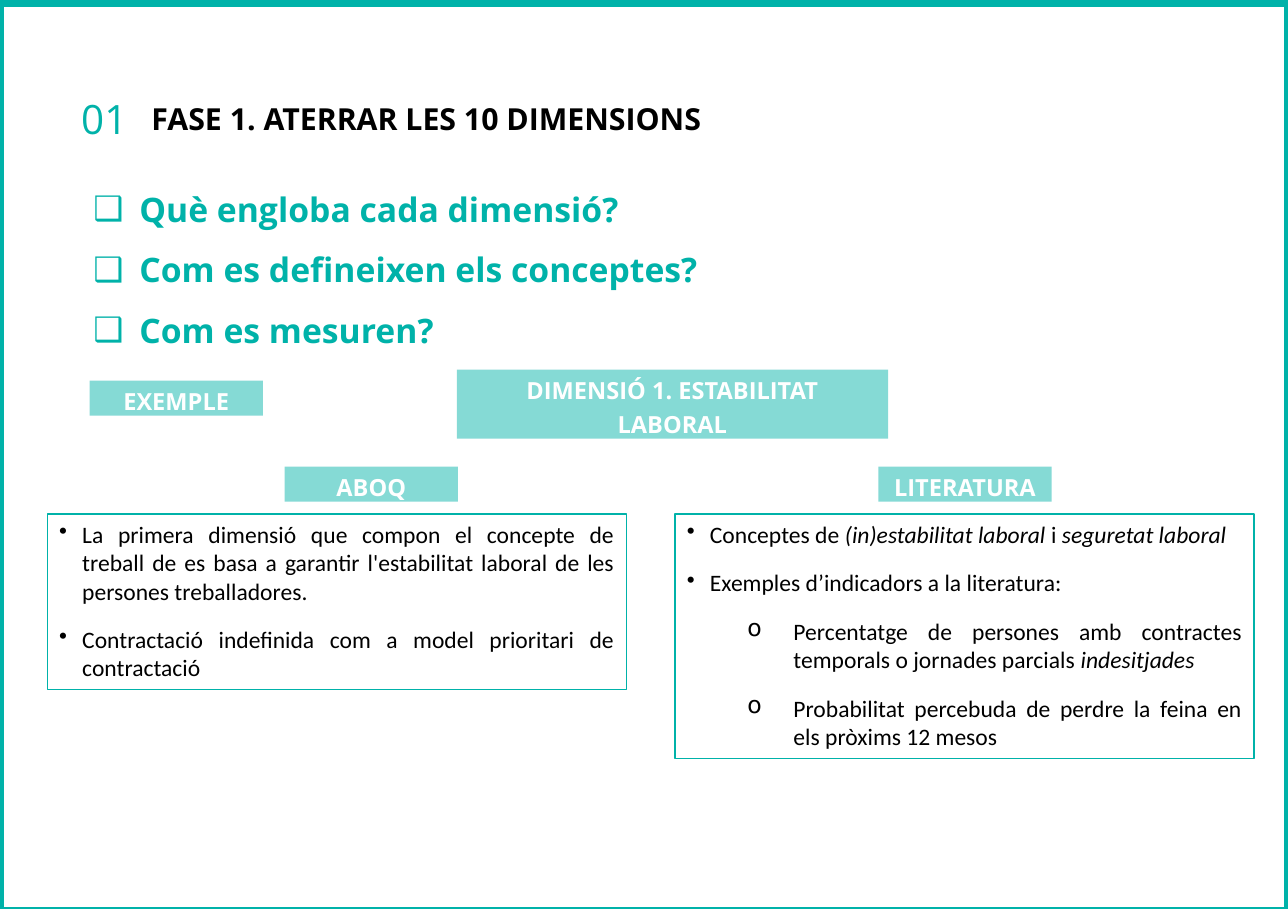
import dataclasses

import lxml.etree
import pptx
import pptx.dml.color
import pptx.enum.shapes
import pptx.enum.text
import pptx.oxml.ns
import pptx.util

PX = 9144  # EMU per px, 100 px to the inch
ALIGN = pptx.enum.text.PP_ALIGN
ANCHOR = pptx.enum.text.MSO_ANCHOR
FIT = pptx.enum.text.MSO_AUTO_SIZE
qn = pptx.oxml.ns.qn


@dataclasses.dataclass(frozen=True)
class Theme:
    teal: str = "00B2A9"
    black: str = "000000"
    white: str = "FFFFFF"
    heading_font: str = "Open Sans"
    body_font: str = "Calibri"
    number_size: int = 24
    question_size: int = 20
    title_size: int = 18
    text_size: int = 14
    frame_line: float = 5
    panel_line: float = 0.75
    label_opacity: int = 48


@dataclasses.dataclass(frozen=True)
class Box:
    left: int
    top: int
    width: int
    height: int

    def inner(self, left, top, width, height):
        """Box whose position is counted from this one's corner."""
        return Box(self.left + left, self.top + top, width, height)

    def emu(self):
        return [pptx.util.Emu(value * PX) for value in dataclasses.astuple(self)]


THEME = Theme()
PLAIN_FRAME = {"margin_left": 0, "margin_right": 0, "margin_top": 0, "margin_bottom": 0,
               "vertical_anchor": ANCHOR.MIDDLE, "word_wrap": True, "auto_size": FIT.NONE}


def apply(target, values):
    for name, value in values.items():
        setattr(target, name, value)


def place(shape, box):
    apply(shape, dict(zip(("left", "top", "width", "height"), box.emu())))


def rgb(color):
    return pptx.dml.color.RGBColor.from_string(color)


def write(paragraph, text, size, color, font=THEME.heading_font, **style):
    run = paragraph.add_run()
    run.text = text
    apply(run.font, {"name": font, "size": pptx.util.Pt(size), **style})
    run.font.color.rgb = rgb(color)


def bullet(paragraph, character, margin, hanging):
    properties = paragraph._p.get_or_add_pPr()
    properties.set("marL", str(margin * PX))
    properties.set("indent", str(-hanging * PX))
    lxml.etree.SubElement(properties, qn("a:buChar")).set("char", character)


def paragraphs(frame, items):
    """Pair each item with a paragraph, the first being the one already there."""
    for index, item in enumerate(items):
        yield (frame.add_paragraph() if index else frame.paragraphs[0]), item


def add_rectangle(slide, box, line_width=None):
    kind = pptx.enum.shapes.MSO_SHAPE.RECTANGLE
    shape = slide.shapes.add_shape(kind, *box.emu())
    shape.shadow.inherit = False
    shape.fill.background()
    if line_width is None:
        shape.line.fill.background()
    else:
        shape.line.color.rgb = rgb(THEME.teal)
        shape.line.width = pptx.util.Pt(line_width)
    return shape


def header(slide, box, number, title):
    number_box = slide.shapes.add_textbox(*box.inner(0, 18, 48, 39).emu())
    apply(number_box.text_frame, PLAIN_FRAME)
    write(number_box.text_frame.paragraphs[0], number, THEME.number_size, THEME.teal)
    heading = slide.shapes.title
    place(heading, box.inner(58, 0, box.width - 58, box.height))
    apply(heading.text_frame, PLAIN_FRAME)
    paragraph = heading.text_frame.paragraphs[0]
    paragraph.alignment = ALIGN.LEFT
    write(paragraph, title, THEME.title_size, THEME.black, bold=True)


def question_list(slide, box, questions):
    body = slide.placeholders[1]
    place(body, box)
    apply(body.text_frame, {"word_wrap": False, "auto_size": FIT.SHAPE_TO_FIT_TEXT})
    for paragraph, question in paragraphs(body.text_frame, questions):
        apply(paragraph, {"line_spacing": 1.5, "space_before": pptx.util.Pt(0)})
        bullet(paragraph, "❑", 38, 38)
        write(paragraph, question, THEME.question_size, THEME.teal, bold=True)


def label(slide, box, text):
    shape = add_rectangle(slide, box)
    shape.fill.solid()
    shape.fill.fore_color.rgb = rgb(THEME.teal)
    color = shape._element.spPr.find(qn("a:solidFill"))[0]
    lxml.etree.SubElement(color, qn("a:alpha")).set("val", str(THEME.label_opacity * 1000))
    apply(shape.text_frame, {"word_wrap": True, "vertical_anchor": ANCHOR.MIDDLE})
    paragraph = shape.text_frame.paragraphs[0]
    apply(paragraph, {"alignment": ALIGN.CENTER, "line_spacing": 1.2})
    write(paragraph, text, THEME.text_size, THEME.white, bold=True)


def column(slide, box, label_left, heading, items):
    """Label above a panel of bullets; each item is (level, [(text, italic), ...])."""
    label(slide, box.inner(label_left, 0, 143, 29), heading)
    panel = add_rectangle(slide, box.inner(0, 39, box.width, box.height - 39), THEME.panel_line)
    apply(panel.text_frame, {"word_wrap": True, "vertical_anchor": ANCHOR.TOP,
                             "auto_size": FIT.SHAPE_TO_FIT_TEXT})
    bullets = [("•", 19, 19), ("o", 88, 38)]
    for paragraph, (level, pieces) in paragraphs(panel.text_frame, items):
        apply(paragraph, {"alignment": ALIGN.JUSTIFY, "level": level,
                          "space_before": pptx.util.Pt(6), "space_after": pptx.util.Pt(6)})
        bullet(paragraph, *bullets[level])
        for text, italic in pieces:
            write(paragraph, text, THEME.text_size, THEME.black, THEME.body_font, italic=italic)


ABOQ = [
    (0, [("La primera dimensió que compon el concepte de treball de es basa a garantir "
          "l'estabilitat laboral de les persones treballadores.", False)]),
    (0, [("Contractació indefinida com a model prioritari de contractació", False)]),
]
LITERATURE = [
    (0, [("Conceptes de ", False), ("(in)estabilitat laboral ", True),
         ("i ", False), ("seguretat laboral", True)]),
    (0, [("Exemples d’indicadors a la literatura:", False)]),
    (1, [("Percentatge de persones amb contractes temporals o jornades parcials ", False),
         ("indesitjades", True)]),
    (1, [("Probabilitat percebuda de perdre la feina en els pròxims 12 mesos", False)]),
]


def main():
    presentation = pptx.Presentation()
    page = Box(0, 0, 1063, 750)
    apply(presentation, dict(zip(("slide_width", "slide_height"), page.emu()[2:])))
    slide = presentation.slides.add_slide(presentation.slide_layouts[1])
    add_rectangle(slide, page.inner(0, 2, page.width, page.height), THEME.frame_line)
    header(slide, Box(67, 60, 577, 76), "01", "FASE 1. ATERRAR LES 10 DIMENSIONS")
    question_list(slide, Box(67, 134, 523, 156), [
        "Què engloba cada dimensió?", "Com es defineixen els conceptes?", "Com es mesuren?"])
    label(slide, Box(74, 314, 143, 29), "EXEMPLE")
    label(slide, Box(377, 305, 356, 57), "DIMENSIÓ 1. ESTABILITAT LABORAL")
    column(slide, Box(39, 385, 478, 184), 196, "ABOQ", ABOQ)
    column(slide, Box(557, 385, 478, 241), 168, "LITERATURA", LITERATURE)
    presentation.save("out.pptx")


if __name__ == "__main__":
    main()
